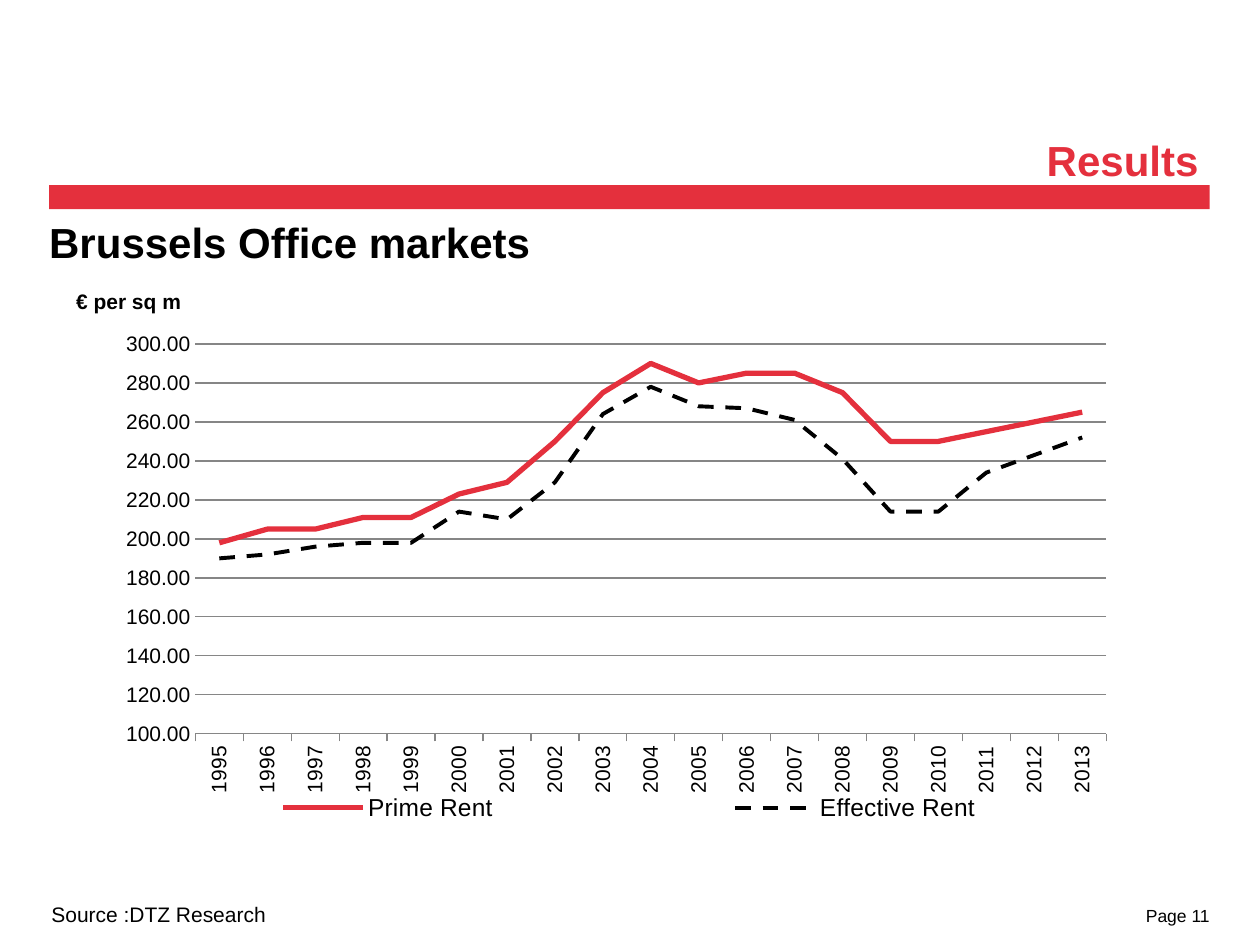
from pptx import Presentation
from pptx import util as u
from pptx.chart.data import CategoryChartData
from pptx.dml.color import RGBColor
from pptx.enum import chart as charts, dml, shapes, text
from pptx.oxml import parse_xml
from pptx.oxml.ns import nsdecls, qn

COLORS = {"red": "E4303D", "black": "000000", "grid": "868686"}
FONT = "Arial"
YEARS = [str(year) for year in range(1995, 2014)]
PRIME = [198, 205, 205, 211, 211, 223, 229, 250, 275, 290,
         280, 285, 285, 275, 250, 250, 255, 260, 265]
EFFECTIVE = [190, 192, 196, 198, 198, 214, 210, 229, 264, 278,
             268, 267, 261, 241, 214, 214, 234, 243, 252]
SERIES = [
    ("Prime Rent", PRIME, "red", 3, dml.MSO_LINE.SOLID),
    ("Effective Rent", EFFECTIVE, "black", 2.25, dml.MSO_LINE.DASH),
]


def place(element, index, target=None, **fractions):
    for old in element.findall(qn("c:layout")):
        element.remove(old)
    inner = f'<c:layoutTarget val="{target}"/>' if target else ""
    modes = "".join(f'<c:{key}Mode val="edge"/>' for key in "xy")
    sizes = "".join(f'<c:{key} val="{value}"/>' for key, value in fractions.items())
    element.insert(index, parse_xml(
        f'<c:layout {nsdecls("c")}><c:manualLayout>{inner}{modes}{sizes}'
        '</c:manualLayout></c:layout>'))


def turn(element, angle):
    body = element.xpath(".//a:bodyPr")[0]
    body.set("rot", str(angle * 60000))
    body.set("vert", "horz")


class SlideMaker:
    def __init__(self, page):
        self.page = page

    def color(self, name):
        return RGBColor.from_string(COLORS[name])

    def style(self, font, size, color="black", bold=False):
        font.name = FONT
        font.size = u.Pt(size)
        font.bold = bold
        font.color.rgb = self.color(color)

    def line(self, line, color, width):
        line.color.rgb = self.color(color)
        line.width = u.Pt(width)

    def bar(self, area, color):
        bar = self.page.shapes.add_shape(
            shapes.MSO_SHAPE.RECTANGLE, *map(u.Inches, area))
        bar.shadow.inherit = False
        bar.fill.solid()
        bar.fill.fore_color.rgb = self.color(color)
        bar.line.fill.background()

    def text(self, area, words, size, color="black", bold=False,
             align=text.PP_ALIGN.LEFT, insets=(0.1, 0.05, 0.1, 0.05), spacing=None):
        box = self.page.shapes.add_textbox(*map(u.Inches, area))
        frame = box.text_frame
        frame.word_wrap = True
        (frame.margin_left, frame.margin_top,
         frame.margin_right, frame.margin_bottom) = map(u.Inches, insets)
        para = frame.paragraphs[0]
        para.alignment = align
        para.line_spacing = spacing
        span = para.add_run()
        span.text = words
        self.style(span.font, size, color, bold)

    def line_chart(self, area, categories, series, axis_title):
        data = CategoryChartData(number_format="0.00")
        data.categories = categories
        for name, values, *_ in series:
            data.add_series(name, values)
        chart = self.page.shapes.add_chart(
            charts.XL_CHART_TYPE.LINE, *map(u.Inches, area), data).chart
        chart.has_title = False
        self.style(chart.font, 12)
        place(chart.plots[0]._element.getparent(), 0, "inner",
              x=0.126, y=0.124, w=0.785, h=0.619)

        for plotted, (_, _, color, width, dash) in zip(chart.plots[0].series, series):
            plotted.smooth = False
            plotted.marker.style = charts.XL_MARKER_STYLE.NONE
            self.line(plotted.format.line, color, width)
            plotted.format.line.dash_style = dash

        years = chart.category_axis
        years.major_tick_mark = charts.XL_TICK_MARK.OUTSIDE
        self.style(years.tick_labels.font, 12)
        self.line(years.format.line, "grid", 0.75)
        turn(years._element, -90)

        rents = chart.value_axis
        rents.minimum_scale, rents.maximum_scale, rents.major_unit = 100, 300, 20
        rents.major_tick_mark = charts.XL_TICK_MARK.NONE
        rents.tick_labels.number_format = "0.00"
        rents.tick_labels.number_format_is_linked = False
        self.style(rents.tick_labels.font, 12)
        rents.format.line.fill.background()
        self.line(rents.major_gridlines.format.line, "grid", 0.75)

        title = rents.axis_title
        span = title.text_frame.paragraphs[0].add_run()
        span.text = axis_title
        self.style(span.font, 12, bold=True)
        turn(title._element, 0)
        place(title._element, 1, x=0.02, y=0.03)

        chart.has_legend = True
        legend = chart.legend
        legend.position = charts.XL_LEGEND_POSITION.BOTTOM
        legend.include_in_layout = False
        self.style(legend.font, 14)
        place(legend._element, 1, x=0, y=0.82, w=1, h=0.08)


def main():
    deck = Presentation()
    deck.slide_width, deck.slide_height = u.Inches(10), u.Inches(7.5)
    maker = SlideMaker(deck.slides.add_slide(deck.slide_layouts[6]))
    right = text.PP_ALIGN.RIGHT
    maker.bar((0.39, 1.47, 9.21, 0.19), "red")
    maker.text((8.47, 7.18, 1.13, 0.14), "Page 11", 10, align=right,
               insets=(0, 0, 0, 0))
    maker.text((0.31, 7.11, 3.36, 0.3), "Source :DTZ Research", 12)
    maker.text((1.41, 1.02, 8.2, 0.51), "Results", 24, "red", True, right)
    maker.text((0.39, 1.66, 9.21, 0.48), "Brussels Office markets", 24, bold=True,
               insets=(0, 0.1, 0, 0), spacing=0.9)
    maker.line_chart((0.39, 2.11, 9.21, 5), YEARS, SERIES, "€ per sq m")
    deck.save("out.pptx")


if __name__ == "__main__":
    main()
